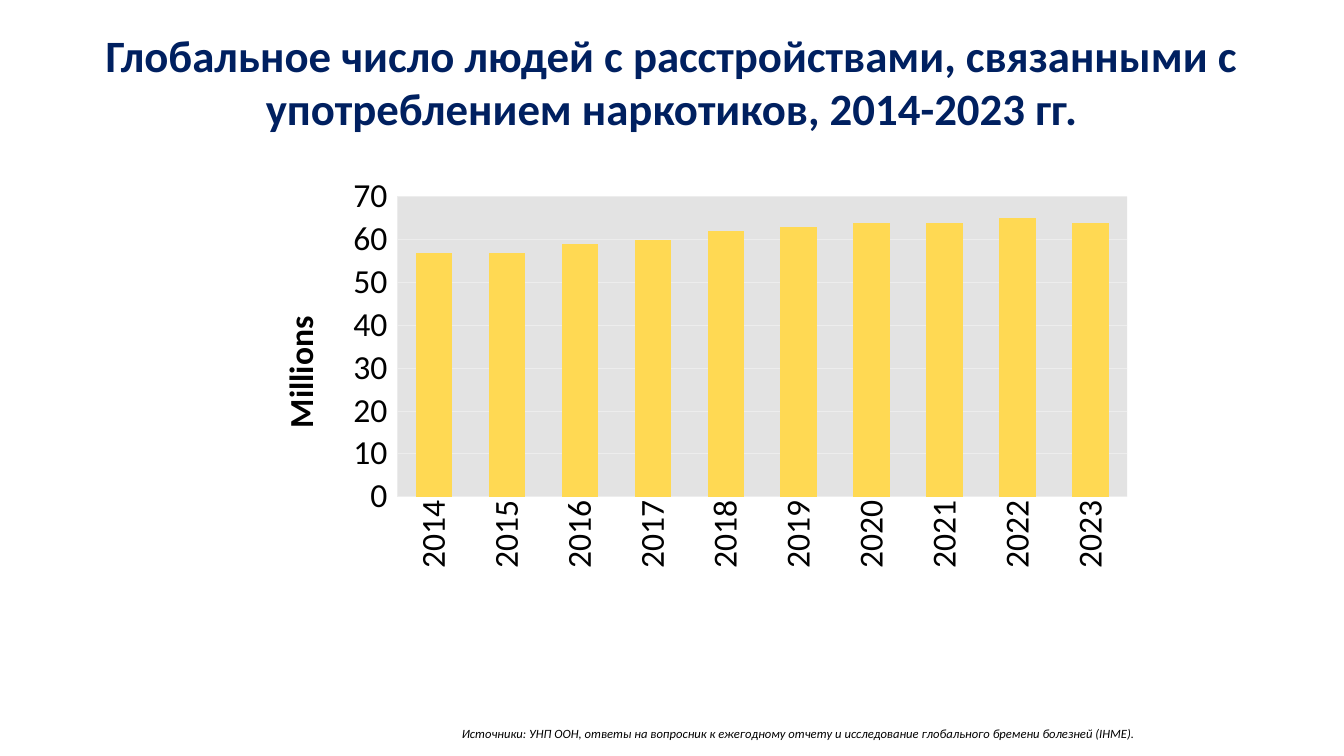
import pptx
import pptx.chart.data
import pptx.dml.color
import pptx.enum.chart
import pptx.enum.text
import pptx.oxml
import pptx.oxml.ns
import pptx.util

WIDTH, HEIGHT = 13.33, 7.5
NAVY, BLACK, YELLOW, GREY, PALE = "002060", "000000", "FFD953", "E3E3E3", "EDEDED"
YEARS = range(2014, 2024)
MILLIONS = (57, 57, 59, 60, 62, 63, 64, 64, 65, 64)


def color(value):
    return pptx.dml.color.RGBColor.from_string(value)


class SlideBuilder:
    """Holds the font and slide; boxes are shares of the slide's size."""

    def __init__(self, slide, font="Calibri"):
        self.slide = slide
        self.font = font

    def box(self, left, top, width, height):
        return [pptx.util.Inches(share * size) for share, size in
                zip((left, top, width, height), (WIDTH, HEIGHT) * 2)]

    def style(self, font, size, ink=BLACK, bold=False, italic=False):
        font.name, font.size = self.font, pptx.util.Pt(size)
        font.bold, font.italic = bold, italic
        font.color.rgb = color(ink)

    def text(self, box, wording, alignment, **style):
        frame = self.slide.shapes.add_textbox(*self.box(*box)).text_frame
        frame.word_wrap = True
        frame.margin_left = frame.margin_right = 0
        frame.margin_top = frame.margin_bottom = 0
        paragraph = frame.paragraphs[0]
        paragraph.alignment = alignment
        run = paragraph.add_run()
        run.text = wording
        self.style(run.font, **style)

    def column_chart(self, box, categories, values, axis_title, size):
        data = pptx.chart.data.CategoryChartData(number_format="#,##0")
        data.categories = [str(category) for category in categories]
        data.add_series("Series 1", values)
        chart = self.slide.shapes.add_chart(
            pptx.enum.chart.XL_CHART_TYPE.COLUMN_CLUSTERED, *self.box(*box), data).chart
        chart.has_legend = chart.has_title = False
        self.style(chart.font, size)

        plot = chart.plots[0]
        plot.gap_width = plot.overlap = 100
        plot.vary_by_categories = False
        fill = plot.series[0].format.fill
        fill.solid()
        fill.fore_color.rgb = color(YELLOW)

        ticks = pptx.enum.chart.XL_TICK_MARK
        years, amounts = chart.category_axis, chart.value_axis
        years.major_tick_mark = ticks.NONE
        amounts.major_tick_mark = ticks.OUTSIDE
        for axis in (years, amounts):
            axis.format.line.fill.background()
            self.style(axis.tick_labels.font, size)
        labels = years._element.find(pptx.oxml.ns.qn("c:txPr"))
        labels.find(pptx.oxml.ns.qn("a:bodyPr")).set("rot", "-5400000")

        amounts.minimum_scale, amounts.maximum_scale, amounts.major_unit = 0, 70, 10
        amounts.tick_labels.number_format = "#,##0"
        amounts.tick_labels.number_format_is_linked = False
        grid = amounts.major_gridlines.format.line
        grid.color.rgb = color(PALE)
        grid.width = pptx.util.Pt(0.5)
        frame = amounts.axis_title.text_frame
        run = frame.paragraphs[0].add_run()
        run.text = axis_title
        self.style(run.font, size, bold=True)
        frame._txBody.find(pptx.oxml.ns.qn("a:bodyPr")).set("rot", "-5400000")
        return chart

    def plot_area(self, chart, fill, **shares):
        """Place and fill the inner plot area; shares x, y, w, h are of the chart."""
        area = chart._chartSpace.chart.plotArea
        namespaces = pptx.oxml.ns.nsdecls("c", "a")
        for layout in area.findall(pptx.oxml.ns.qn("c:layout")):
            area.remove(layout)
        modes = "".join(f'<c:{name}Mode val="edge"/>' for name in "xy")
        places = "".join(f'<c:{name} val="{share}"/>' for name, share in shares.items())
        area.insert(0, pptx.oxml.parse_xml(
            f'<c:layout {namespaces}><c:manualLayout><c:layoutTarget val="inner"/>'
            f"{modes}{places}</c:manualLayout></c:layout>"))
        area.append(pptx.oxml.parse_xml(
            f'<c:spPr {namespaces}><a:solidFill><a:srgbClr val="{fill}"/></a:solidFill>'
            "<a:ln><a:noFill/></a:ln></c:spPr>"))


def main():
    presentation = pptx.Presentation()
    presentation.slide_width = pptx.util.Inches(WIDTH)
    presentation.slide_height = pptx.util.Inches(HEIGHT)
    builder = SlideBuilder(presentation.slides.add_slide(presentation.slide_layouts[6]))
    align = pptx.enum.text.PP_ALIGN

    builder.text(
        (0.025, 0.036, 0.95, 0.144),
        "Глобальное число людей с расстройствами, связанными с "
        "употреблением наркотиков, 2014-2023 гг.",
        align.CENTER, size=32, ink=NAVY, bold=True)
    builder.text(
        (0.3436, 0.96, 0.589, 0.015),
        "Источники: УНП ООН, ответы на вопросник к ежегодному отчету "
        "и исследование глобального бремени болезней (IHME).",
        align.LEFT, size=9, italic=True)
    chart = builder.column_chart(
        (0.15, 0.2333, 0.7704, 0.6387), YEARS, MILLIONS, "Millions", size=24)
    builder.plot_area(chart, GREY, x=0.189, y=0.041, w=0.705, h=0.622)

    presentation.save("out.pptx")


if __name__ == "__main__":
    main()
